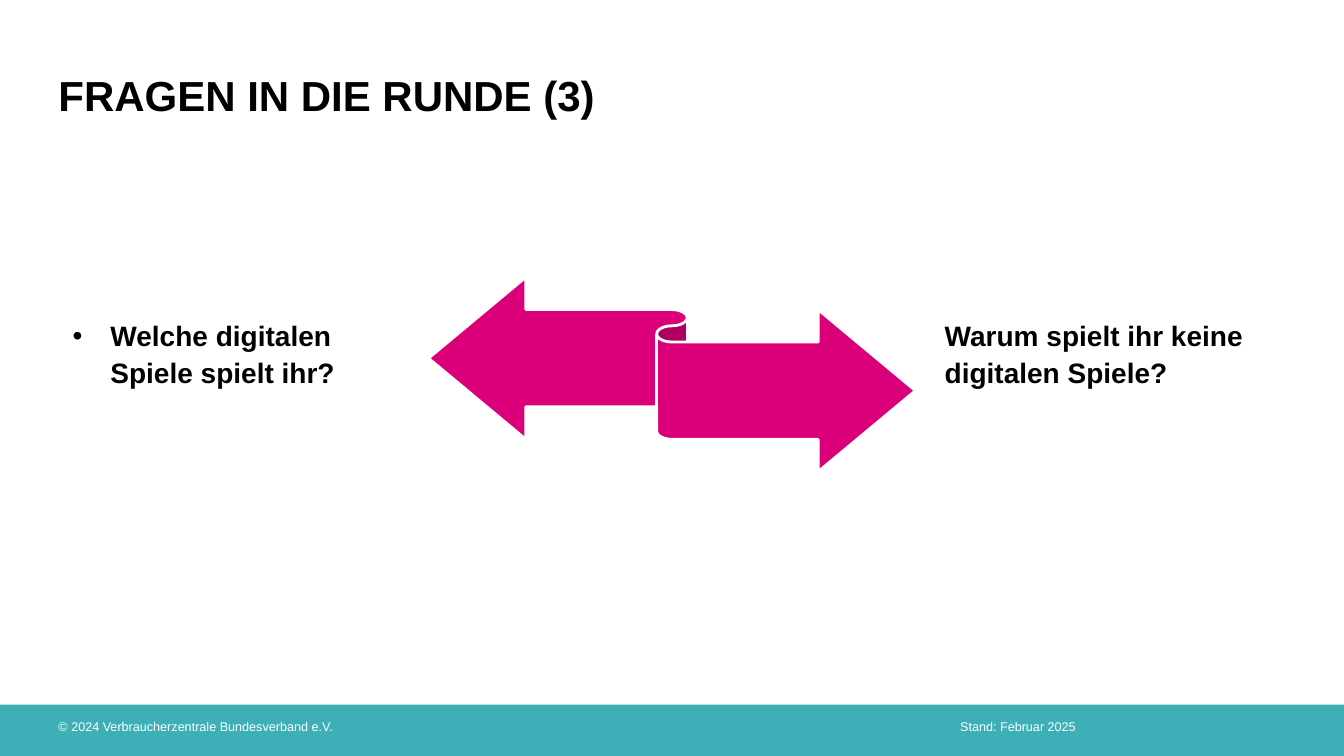
from dataclasses import dataclass

from lxml.etree import SubElement
from pptx import Presentation
from pptx.dml.color import RGBColor as Rgb
from pptx.enum.shapes import MSO_SHAPE as Kind
from pptx.enum.text import MSO_ANCHOR as Anchor, PP_ALIGN as Align
from pptx.oxml.ns import qn
from pptx.util import Inches, Pt


@dataclass(frozen=True)
class Theme:
    font: str = "Arial"
    ink: Rgb = Rgb(0, 0, 0)
    paper: Rgb = Rgb(255, 255, 255)
    teal: Rgb = Rgb(0, 152, 161)
    pink: Rgb = Rgb(219, 0, 122)
    head: int = 30
    body: int = 20
    note: int = 9


class Page:
    """Places elements on one slide; boxes are left, top, width, height in percent of its size."""

    def __init__(self, deck, theme):
        self.theme = theme
        self.size = deck.slide_width, deck.slide_height
        self.slide = deck.slides.add_slide(deck.slide_layouts[1])

    def scale(self, box):
        return [round(part * self.size[n % 2] / 100) for n, part in enumerate(box)]

    def shape(self, kind, box, fill, line=None, alpha=None):
        item = self.slide.shapes.add_shape(kind, *self.scale(box))
        item.shadow.inherit = False
        item.fill.solid()
        item.fill.fore_color.rgb = fill
        if line:
            item.line.color.rgb = line
            item.line.width = Pt(2)
        else:
            item.line.fill.background()
        if alpha:
            tint = item.element.spPr.find(f"{qn('a:solidFill')}/{qn('a:srgbClr')}")
            SubElement(tint, qn("a:alpha"), val=str(alpha * 1000))

    def label(self, item, box, text, size, color, bold=True, anchor=Anchor.TOP, align=Align.LEFT):
        item.left, item.top, item.width, item.height = self.scale(box)
        frame = item.text_frame
        frame.text = text
        frame.word_wrap = True
        frame.vertical_anchor = anchor
        frame.margin_left = frame.margin_right = frame.margin_top = frame.margin_bottom = 0
        para = frame.paragraphs[0]
        para.alignment = align
        font = para.font
        font.name, font.size, font.bold = self.theme.font, Pt(size), bold
        font.color.rgb = color
        return para

    def blank(self):
        return self.slide.shapes.add_textbox(0, 0, 0, 0)

    def title(self, box, text):
        look = self.theme
        self.label(self.slide.shapes.title, box, text, look.head, look.ink, anchor=Anchor.BOTTOM)

    def ask(self, item, box, text):
        """Set a question without bullet or indent."""
        props = item.text_frame.paragraphs[0]._p.get_or_add_pPr()
        props.set("marL", "0")
        props.set("indent", "0")
        SubElement(props, qn("a:buNone"))
        para = self.label(item, box, text, self.theme.body, self.theme.ink)
        para.line_spacing = 1.1
        para.space_before, para.space_after = Pt(0), Pt(6)

    def note(self, box, text, align=Align.LEFT):
        look = self.theme
        self.label(self.blank(), box, text, look.note, look.paper, False, Anchor.MIDDLE, align)


def main():
    deck = Presentation()
    deck.slide_width, deck.slide_height = Inches(13.33), Inches(7.5)
    look = Theme()
    page = Page(deck, look)
    edge = 4.35
    foot = 95.07, 2

    page.shape(Kind.RECTANGLE, (0, 93.2, 100, 6.8), look.teal, alpha=76)
    page.title((edge, 9.2, 91.3, 6.67), "FRAGEN IN DIE RUNDE (3)")
    page.ask(page.slide.placeholders[1], (5.4, 41.73, 25.36, 13.47),
             "Welche digitalen Spiele spielt ihr?")
    page.ask(page.blank(), (70.29, 41.73, 22.73, 15.87),
             "Warum spielt ihr keine digitalen Spiele?")
    page.shape(Kind.LEFT_RIGHT_RIBBON, (31.88, 36.67, 36.23, 25.73), look.pink, look.paper)
    page.note((edge, foot[0], 64.37, foot[1]), "© 2024 Verbraucherzentrale Bundesverband e.V.")
    page.note((70.44, foot[0], 9.6, foot[1]), "Stand: Februar 2025", Align.RIGHT)
    deck.save("out.pptx")


if __name__ == "__main__":
    main()
